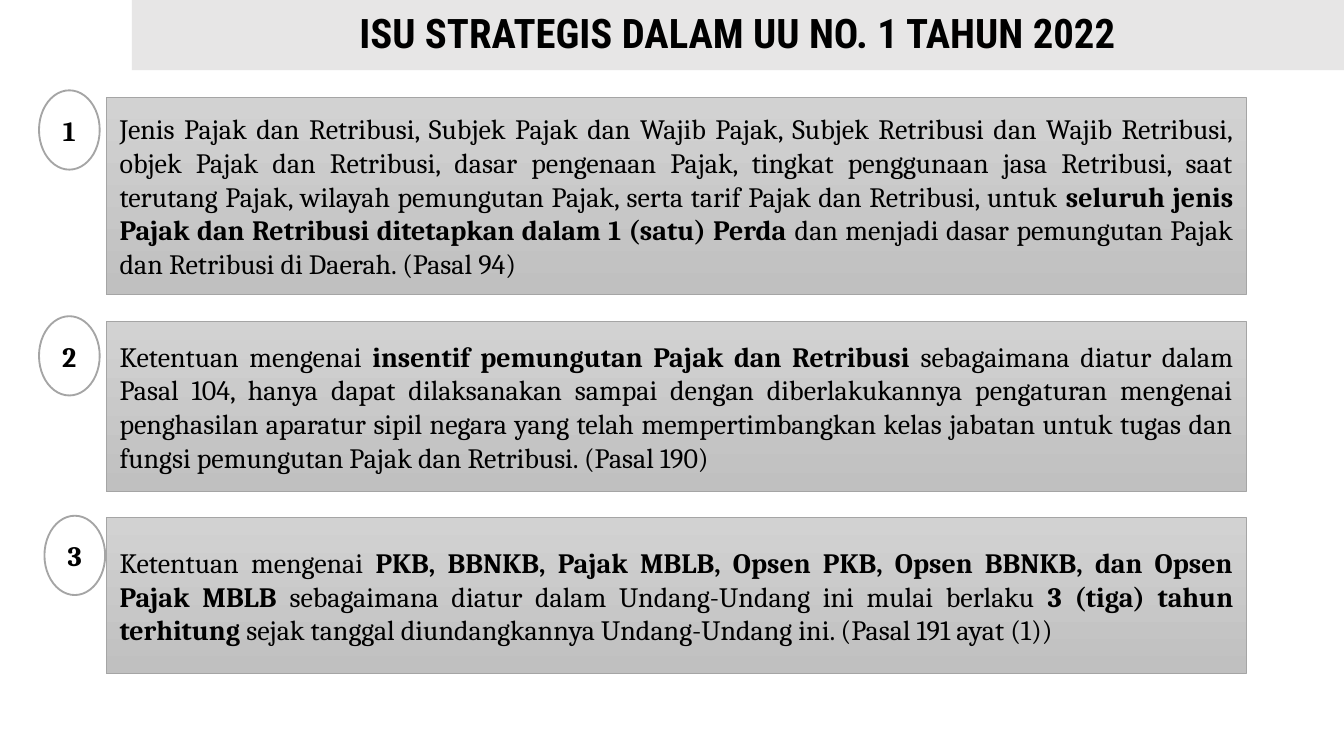
import pptx
import pptx.util
import pptx.dml.color
import pptx.enum.shapes
import pptx.enum.text
from dataclasses import dataclass

Pt = pptx.util.Pt
RGB = pptx.dml.color.RGBColor.from_string
SHAPE = pptx.enum.shapes.MSO_SHAPE
ALIGN = pptx.enum.text.PP_ALIGN


@dataclass(frozen=True)
class Theme:
    ink: str = "000000"
    paper: str = "FFFFFF"
    band: str = "E7E6E6"
    line: str = "A5A5A5"
    box_top: str = "D2D2D2"
    box_bottom: str = "C0C0C0"
    title_font: str = "Roboto Condensed"
    body_font: str = "Cambria"
    title_size: float = 21.8
    body_size: float = 15


class Deck:
    def __init__(self, theme):
        self.theme = theme
        self.prs = pptx.Presentation()
        self.prs.slide_width = Pt(720)
        self.prs.slide_height = Pt(405)
        self.s = self.prs.slides.add_slide(self.prs.slide_layouts[5])

    def text(self, sp, runs, align, font, size, insets):
        tf = sp.text_frame
        tf.word_wrap = True
        tf.auto_size = pptx.enum.text.MSO_AUTO_SIZE.NONE
        tf.vertical_anchor = pptx.enum.text.MSO_ANCHOR.MIDDLE
        tf.margin_left = tf.margin_right = Pt(insets[0])
        tf.margin_top = tf.margin_bottom = Pt(insets[1])
        p = tf.paragraphs[0]
        p.alignment = align
        for words, bold in runs:
            r = p.add_run()
            r.text = words
            r.font.name = font
            r.font.size = Pt(size)
            r.font.bold = bold
            r.font.color.rgb = RGB(self.theme.ink)
        return p

    def shape(self, kind, left, top, width, height, line_width):
        sp = self.s.shapes.add_shape(kind, Pt(left), Pt(top), Pt(width), Pt(height))
        sp.shadow.inherit = False
        sp.line.color.rgb = RGB(self.theme.line)
        sp.line.width = Pt(line_width)
        return sp

    def title(self, words, left, top, width, height):
        t = self.theme
        sp = self.s.shapes.title
        sp.left, sp.top, sp.width, sp.height = Pt(left), Pt(top), Pt(width), Pt(height)
        sp.fill.solid()
        sp.fill.fore_color.rgb = RGB(t.band)
        p = self.text(sp, [(words, True)], ALIGN.CENTER, t.title_font, t.title_size, (5, 3))
        p.line_spacing = 0.9

    def box(self, runs, left, top, width, height):
        t = self.theme
        sp = self.shape(SHAPE.RECTANGLE, left, top, width, height, 0.5)
        sp.fill.gradient()
        sp.fill.gradient_angle = 270
        for stop, colour in zip(sp.fill.gradient_stops, (t.box_top, t.box_bottom)):
            stop.color.rgb = RGB(colour)
        self.text(sp, runs, ALIGN.JUSTIFY, t.body_font, t.body_size, (7.2, 3.6))

    def badge(self, number, left, top):
        t = self.theme
        sp = self.shape(SHAPE.OVAL, left, top, 32.5, 42.5, 1)
        sp.fill.solid()
        sp.fill.fore_color.rgb = RGB(t.paper)
        self.text(sp, [(str(number), True)], ALIGN.CENTER, t.body_font, t.body_size, (0, 0))


ISSUES = [
    (106, 20.9, 48.4, [
        ("Jenis Pajak dan Retribusi, Subjek Pajak dan Wajib Pajak, Subjek Retribusi dan "
         "Wajib Retribusi, objek Pajak dan Retribusi, dasar pengenaan Pajak, tingkat "
         "penggunaan jasa Retribusi, saat terutang Pajak, wilayah pemungutan Pajak, "
         "serta tarif Pajak dan Retribusi, untuk ", False),
        ("seluruh jenis Pajak dan Retribusi ditetapkan dalam 1 (satu) Perda ", True),
        ("dan menjadi dasar pemungutan Pajak dan Retribusi di Daerah. (Pasal 94)", False),
    ]),
    (91.5, 20.9, 169.4, [
        ("Ketentuan mengenai ", False),
        ("insentif pemungutan Pajak dan Retribusi ", True),
        ("sebagaimana diatur dalam Pasal 104, hanya dapat dilaksanakan sampai dengan "
         "diberlakukannya pengaturan mengenai penghasilan aparatur sipil negara yang "
         "telah mempertimbangkan kelas jabatan untuk tugas dan fungsi pemungutan Pajak "
         "dan Retribusi. (Pasal 190)", False),
    ]),
    (83.5, 23.8, 276.3, [
        ("Ketentuan mengenai ", False),
        ("PKB, BBNKB, Pajak MBLB, Opsen PKB, Opsen BBNKB, dan Opsen Pajak MBLB ", True),
        ("sebagaimana diatur dalam Undang-Undang ini mulai berlaku ", False),
        ("3 (tiga) tahun terhitung ", True),
        ("sejak tanggal diundangkannya Undang-Undang ini. (Pasal 191 ayat (1))", False),
    ]),
]
GAP = 14


def main():
    deck = Deck(Theme())
    deck.title("ISU STRATEGIS DALAM UU NO. 1 TAHUN 2022", 70.6, 0, 649.4, 37.6)
    top = 52
    for number, (height, badge_left, badge_top, runs) in enumerate(ISSUES, 1):
        deck.box(runs, 57, top, 610.8, height)
        deck.badge(number, badge_left, badge_top)
        top += height + GAP
    deck.prs.save("out.pptx")


if __name__ == "__main__":
    main()
